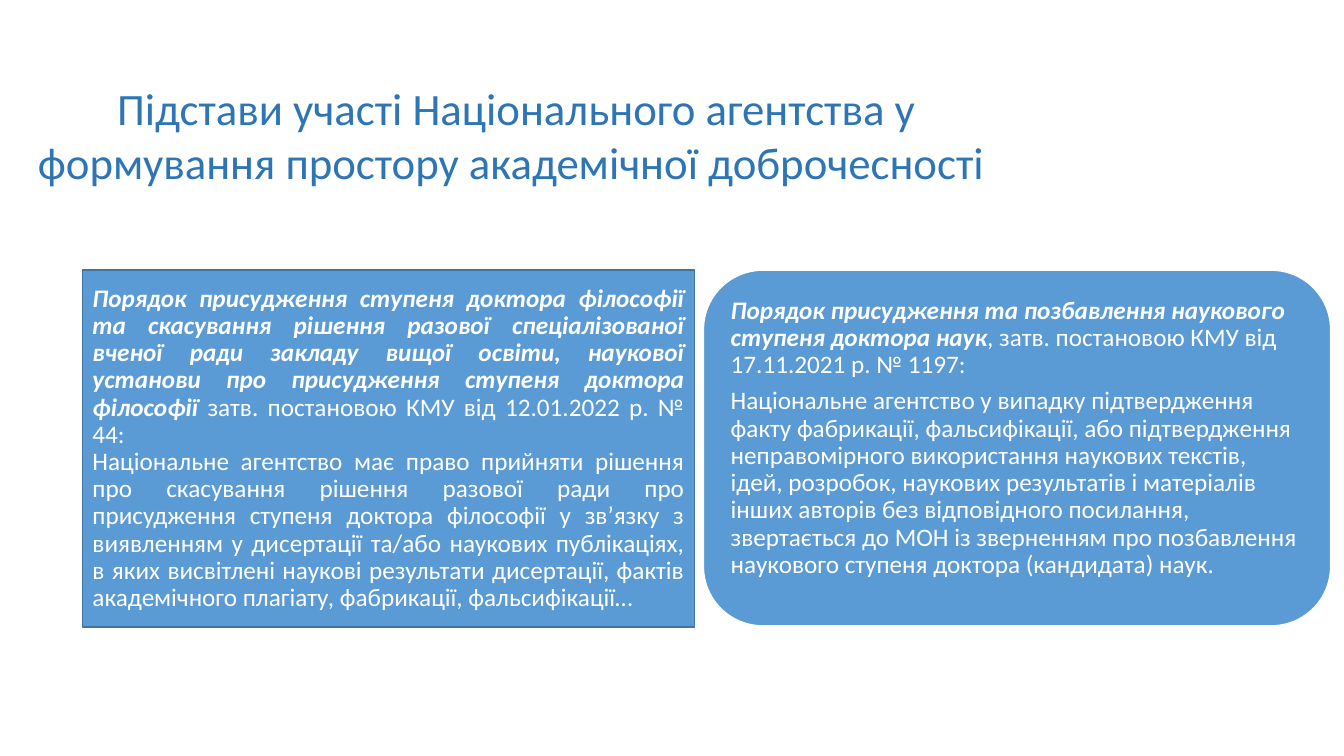
from pptx import Presentation
from pptx.dml.color import RGBColor
from pptx.enum.shapes import MSO_SHAPE as SHAPE
from pptx.enum.text import MSO_ANCHOR as ANCHOR, MSO_AUTO_SIZE as AUTO, PP_ALIGN as ALIGN
from pptx.util import Pt

FONT = "Calibri"
COLORS = {"title": "2E75B6", "panel": "5B9BD5", "edge": "43739E", "white": "FFFFFF"}

TITLE = ("Підстави участі Національного агентства у формування простору "
         "академічної доброчесності ")

# Each paragraph is a list of (text, emphasised) runs
PHD_ORDER = [
    [("Порядок присудження ступеня доктора філософії та скасування рішення разової "
      "спеціалізованої вченої ради закладу вищої освіти, наукової установи про "
      "присудження ступеня доктора філософії ", True),
     ("затв. постановою КМУ від 12.01.2022 р. № 44:", False)],
    [("Національне агентство має право прийняти рішення про скасування рішення разової "
      "ради про присудження ступеня доктора філософії у зв’язку з виявленням у "
      "дисертації та/або наукових публікаціях, в яких висвітлені наукові результати "
      "дисертації, фактів академічного плагіату, фабрикації, фальсифікації…", False)],
]
DOCTOR_ORDER = [
    [("Порядок присудження та позбавлення наукового ступеня доктора наук", True),
     (", затв. постановою КМУ від 17.11.2021 р. № 1197:", False)],
    [("Національне агентство у випадку підтвердження факту фабрикації, фальсифікації, "
      "або підтвердження неправомірного використання наукових текстів, ідей, розробок, "
      "наукових результатів і матеріалів інших авторів без відповідного посилання, "
      "звертається до МОН із зверненням про позбавлення наукового ступеня доктора "
      "(кандидата) наук.", False)],
]


def rgb(name):
    return RGBColor.from_string(COLORS[name])


def style(p, size, color, align):
    p.alignment = align
    p.font.name = FONT
    p.font.size = Pt(size)
    p.font.color.rgb = rgb(color)


def add_title(s, text, x, y, w, h):
    title = s.shapes.title
    title.left, title.top, title.width, title.height = Pt(x), Pt(y), Pt(w), Pt(h)
    tf = title.text_frame
    tf.text = text
    tf.word_wrap = True
    tf.auto_size = AUTO.NONE
    tf.vertical_anchor = ANCHOR.TOP
    style(tf.paragraphs[0], 32, "title", ALIGN.CENTER)


def add_panel(s, kind, box, edge, paragraphs, align, anchor, gap=0, top_inset=3.6):
    sp = s.shapes.add_shape(kind, *map(Pt, box))
    sp.shadow.inherit = False
    sp.fill.solid()
    sp.fill.fore_color.rgb = rgb("panel")
    sp.line.color.rgb = rgb(edge)
    sp.line.width = Pt(1)
    tf = sp.text_frame
    tf.word_wrap = True
    tf.vertical_anchor = anchor
    tf.margin_top = Pt(top_inset)
    for i, runs in enumerate(paragraphs):
        p = tf.add_paragraph() if i else tf.paragraphs[0]
        style(p, 18, "white", align)
        p.line_spacing = 0.9
        p.space_after = Pt(gap)
        for text, emphasised in runs:
            r = p.add_run()
            r.text = text
            r.font.bold = r.font.italic = emphasised


def main():
    prs = Presentation()
    prs.slide_width, prs.slide_height = Pt(960), Pt(540)
    s = prs.slides.add_slide(prs.slide_layouts[5])

    # Heading
    add_title(s, TITLE, 0, 54, 738, 85)

    # The two regulations side by side
    add_panel(s, SHAPE.RECTANGLE, (59, 193, 437, 255), "edge", PHD_ORDER,
              ALIGN.JUSTIFY, ANCHOR.MIDDLE)
    add_panel(s, SHAPE.ROUNDED_RECTANGLE, (502.5, 193, 448, 254), "white", DOCTOR_ORDER,
              ALIGN.LEFT, ANCHOR.TOP, gap=6.3, top_inset=7.2)

    prs.save("out.pptx")


if __name__ == "__main__":
    main()
